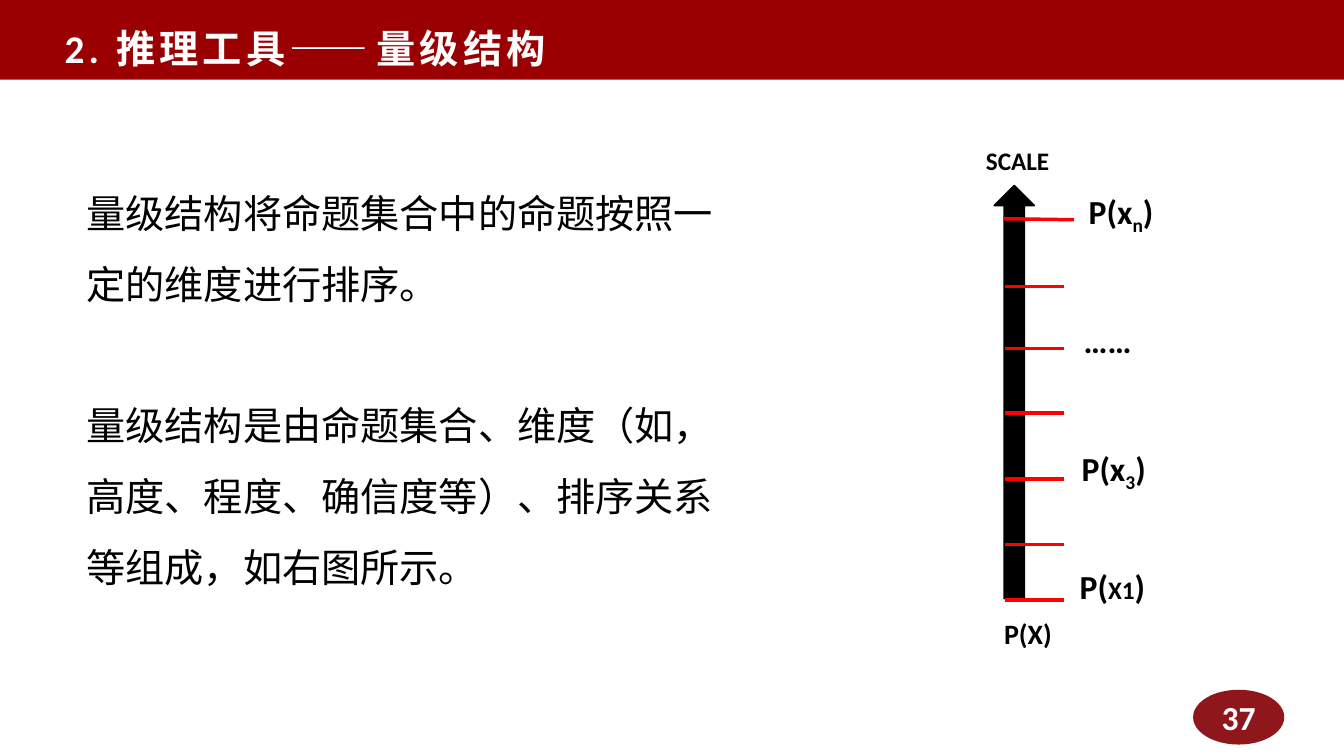
import pptx
import pptx.util
import pptx.dml.color
import pptx.enum.shapes
import pptx.enum.text
import pptx.oxml.ns
from dataclasses import dataclass
from lxml import etree

Inches = pptx.util.Inches
Pt = pptx.util.Pt
SHAPE = pptx.enum.shapes.MSO_SHAPE
ANCHOR = pptx.enum.text.MSO_ANCHOR
ALIGN = pptx.enum.text.PP_ALIGN


@dataclass(frozen=True)
class Theme:
    font: str = "Calibri"
    band: str = "9A0001"
    badge: str = "8F171C"
    white: str = "FFFFFF"
    black: str = "000000"
    tick: str = "FF0000"
    title_pt: int = 28
    body_pt: int = 28
    label_pt: int = 24
    base_pt: int = 20
    small_pt: int = 18


THEME = Theme()


def rgb(value):
    return pptx.dml.color.RGBColor.from_string(value)


def style(p, size, color, bold=False):
    p.font.name = THEME.font
    p.font.size = Pt(size)
    p.font.bold = bold
    p.font.color.rgb = rgb(color)


def add_solid(slide, kind, x, y, w, h, fill, outlined=True):
    sp = slide.shapes.add_shape(kind, Inches(x), Inches(y), Inches(w), Inches(h))
    sp.shadow.inherit = False
    sp.fill.solid()
    sp.fill.fore_color.rgb = rgb(fill)
    if outlined:
        sp.line.color.rgb = rgb(fill)
        sp.line.width = Pt(1)
    else:
        sp.line.fill.background()
    return sp


def set_title(slide, text):
    sp = slide.shapes.title
    sp.left, sp.top = Inches(0.54), Inches(0.19)
    sp.width, sp.height = Inches(9.72), Inches(0.57)
    tf = sp.text_frame
    tf.auto_size = pptx.enum.text.MSO_AUTO_SIZE.NONE
    tf.vertical_anchor = ANCHOR.MIDDLE
    p = tf.paragraphs[0]
    p.alignment = ALIGN.LEFT
    style(p, THEME.title_pt, THEME.white, bold=True)
    r = p.add_run()
    r.text = text
    r._r.get_or_add_rPr().set("spc", "300")


def add_body(slide, x, y, w, h, texts):
    tf = slide.shapes.add_textbox(Inches(x), Inches(y), Inches(w), Inches(h)).text_frame
    tf.word_wrap = True
    for i, text in enumerate(texts):
        p = tf.paragraphs[0] if i == 0 else tf.add_paragraph()
        p.line_spacing = 1.5
        if i:
            p.space_before = Pt(50.5)
        style(p, THEME.body_pt, THEME.black)
        p.add_run().text = text


def add_label(slide, x, y, w, h, size, text, sub="", tail="", sub_pt=None):
    """Bold label; sub is a subscript, or plain text at sub_pt if that is given."""
    tf = slide.shapes.add_textbox(Inches(x), Inches(y), Inches(w), Inches(h)).text_frame
    tf.word_wrap = True
    p = tf.paragraphs[0]
    style(p, size, THEME.black, bold=True)
    p.add_run().text = text
    if sub:
        r = p.add_run()
        r.text = sub
        if sub_pt:
            r.font.size = Pt(sub_pt)
        else:
            r._r.get_or_add_rPr().set("baseline", "-25000")
        p.add_run().text = tail


def add_tick(slide, x1, y1, x2, y2):
    line = slide.shapes.add_connector(pptx.enum.shapes.MSO_CONNECTOR.STRAIGHT,
                                      Inches(x1), Inches(y1), Inches(x2), Inches(y2))
    line.line.color.rgb = rgb(THEME.tick)
    line.line.width = Pt(2.5)
    etree.SubElement(line._element.spPr, pptx.oxml.ns.qn("a:effectLst"))


def main():
    prs = pptx.Presentation()
    prs.slide_width, prs.slide_height = Inches(13.33), Inches(7.5)
    slide = prs.slides.add_slide(prs.slide_layouts[5])

    # Header band, sent behind the title
    band = add_solid(slide, SHAPE.RECTANGLE, 0, 0, 13.33, 0.79, THEME.band, outlined=False)
    slide.shapes.title._element.addprevious(band._element)
    set_title(slide, "2. 推理工具——量级结构")

    # Page number
    badge = add_solid(slide, SHAPE.OVAL, 11.84, 6.85, 0.89, 0.53, THEME.badge)
    badge.text_frame.vertical_anchor = ANCHOR.MIDDLE
    p = badge.text_frame.paragraphs[0]
    p.alignment = ALIGN.CENTER
    style(p, THEME.label_pt, THEME.white, bold=True)
    p.add_run().text = "37"

    # Explanation
    add_body(slide, 0.76, 1.6, 6.72, 4.34, [
        "量级结构将命题集合中的命题按照一定的维度进行排序。",
        "量级结构是由命题集合、维度（如，高度、程度、确信度等）、排序关系等组成，如右图所示。",
    ])

    # Scale arrow and its ticks
    add_solid(slide, SHAPE.UP_ARROW, 9.86, 1.84, 0.4, 4.1, THEME.black)
    add_tick(slide, 9.95, 2.17, 10.65, 2.18)
    for y in (2.84, 3.46, 4.1, 4.75, 5.4, 5.95):
        add_tick(slide, 9.97, y, 10.55, y)

    # Scale labels
    add_label(slide, 9.68, 1.39, 2.06, 0.4, THEME.small_pt, "SCALE")
    add_label(slide, 10.7, 1.84, 1.04, 0.5, THEME.label_pt, "P(x", "n", ")")
    add_label(slide, 10.65, 3.12, 1.04, 0.5, THEME.label_pt, "……")
    add_label(slide, 10.63, 4.39, 1.04, 0.5, THEME.label_pt, "P(x", "3", ")")
    add_label(slide, 10.61, 5.57, 1.49, 0.5, THEME.label_pt, "P(", "X1", ")", THEME.small_pt)
    add_label(slide, 9.86, 6.07, 0.69, 0.44, THEME.base_pt, "P(X)")

    prs.save("out.pptx")


if __name__ == "__main__":
    main()
